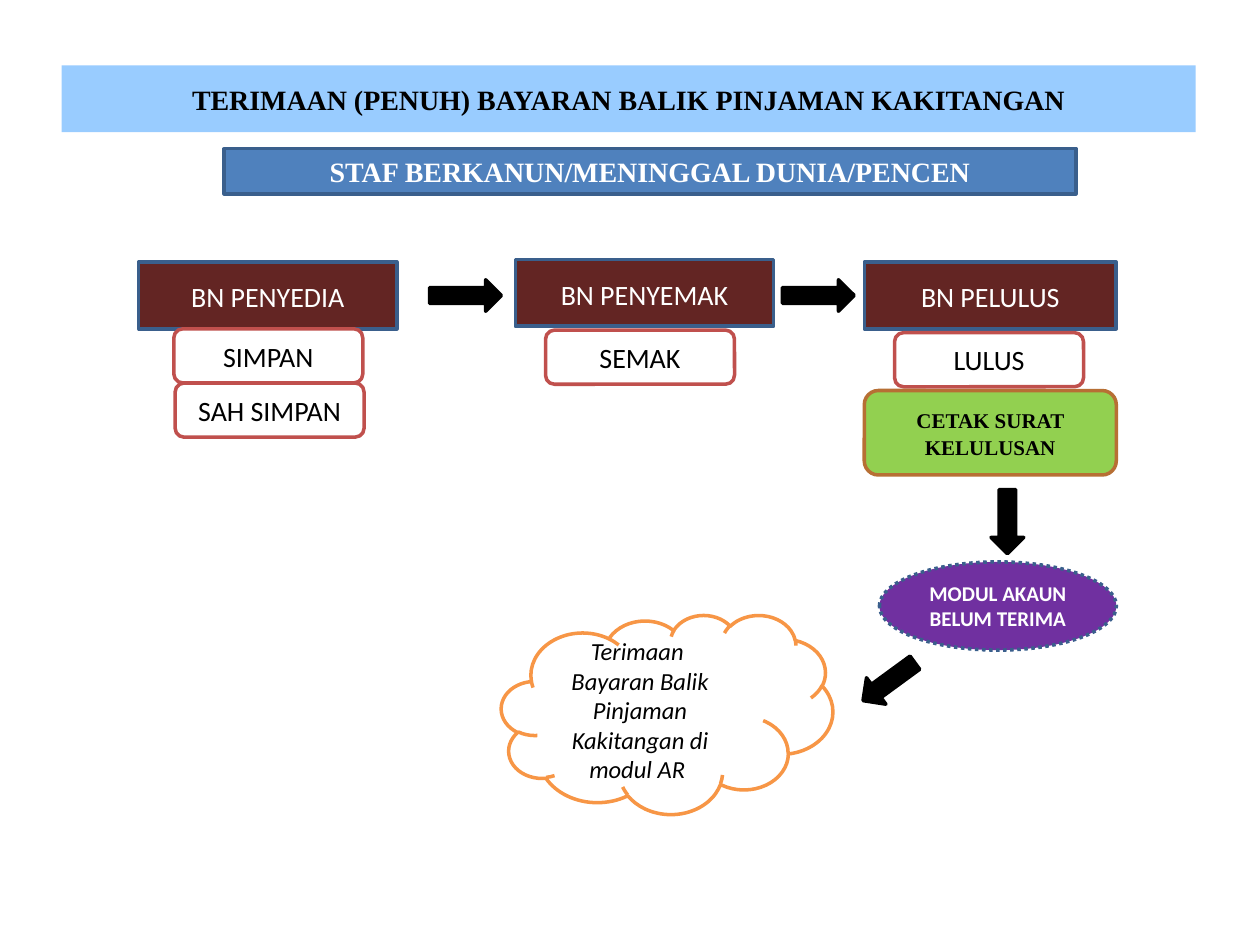
from pptx import Presentation
from pptx.dml.color import RGBColor
from pptx.enum.dml import MSO_LINE_DASH_STYLE as Dash
from pptx.enum.shapes import MSO_SHAPE as Shape
from pptx.enum.text import MSO_ANCHOR as Anchor, PP_ALIGN as Align
from pptx.util import Inches, Pt

SERIF, SANS = "Times New Roman", "Calibri"
BLACK, WHITE, BLUE_EDGE = "000000", "FFFFFF", "3A5F8C"


def color(value):
    return RGBColor.from_string(value)


class FlowSlide:
    """Holds the slide and the style of its elements."""

    line_width = Pt(2)

    def __init__(self, presentation):
        self.slide = presentation.slides.add_slide(presentation.slide_layouts[6])

    def shape(self, kind, box, fill, edge=None):
        shape = self.slide.shapes.add_shape(kind, *map(Inches, box))
        shape.shadow.inherit = False
        shape.fill.solid()
        shape.fill.fore_color.rgb = color(fill)
        if edge:
            shape.line.color.rgb = color(edge)
            shape.line.width = self.line_width
        else:
            shape.line.fill.background()
        return shape

    def label(self, shape, text, ink, size=16, font=SANS, spacing=None, **styles):
        frame = shape.text_frame
        frame.word_wrap = True
        frame.vertical_anchor = Anchor.MIDDLE
        paragraph = frame.paragraphs[0]
        paragraph.text = text
        for name, value in {"alignment": Align.CENTER, **(spacing or {})}.items():
            setattr(paragraph, name, value)
        run_font = paragraph.runs[0].font
        for name, value in {"name": font, "size": Pt(size), **styles}.items():
            setattr(run_font, name, value)
        run_font.color.rgb = color(ink)
        return shape

    def banner(self, text, box, fill, ink, edge=None):
        shape = self.shape(Shape.RECTANGLE, box, fill, edge)
        self.label(shape, text, ink, font=SERIF, bold=True)

    def role(self, text, left, top, width):
        shape = self.shape(Shape.RECTANGLE, (left, top, width, 0.53), "632523", BLUE_EDGE)
        self.label(shape, text, WHITE,
                   spacing={"line_spacing": 1.07, "space_after": Pt(8)})

    def action(self, text, left, top):
        shape = self.shape(Shape.ROUNDED_RECTANGLE, (left, top, 1.5, 0.43), WHITE, "C0504D")
        self.label(shape, text, BLACK)

    def arrow(self, box, rotation=0):
        self.shape(Shape.RIGHT_ARROW, box, BLACK, BLACK).rotation = rotation

    def letter(self, text, box):
        shape = self.shape(Shape.ROUNDED_RECTANGLE, box, "92D050", "B76F34")
        self.label(shape, text, BLACK, 12, SERIF, bold=True,
                   spacing={"line_spacing": 1.06, "space_after": Pt(8)})

    def module(self, text, box):
        shape = self.shape(Shape.OVAL, box, "7030A0", BLUE_EDGE)
        shape.line.dash_style = Dash.ROUND_DOT
        self.label(shape, text, WHITE, 12, bold=True)

    def cloud(self, text, box):
        shape = self.shape(Shape.CLOUD, box, WHITE, "F79646")
        self.label(shape, text, BLACK, 14, italic=True)
        shape.text_frame.margin_right = Inches(0.34)


def main():
    presentation = Presentation()
    presentation.slide_width, presentation.slide_height = Inches(10), Inches(7.5)
    flow = FlowSlide(presentation)

    # Title and case banner
    flow.banner("TERIMAAN (PENUH) BAYARAN BALIK PINJAMAN KAKITANGAN",
                (0.49, 0.52, 9, 0.53), "99CCFF", BLACK)
    flow.banner("STAF BERKANUN/MENINGGAL DUNIA/PENCEN",
                (1.78, 1.18, 6.76, 0.36), "4F81BD", WHITE, BLUE_EDGE)

    # Roles
    for text, left, top, width in (("BN PENYEDIA", 1.1, 2.08, 2.05),
                                   ("BN PENYEMAK", 4.09, 2.06, 2.05),
                                   ("BN PELULUS", 6.86, 2.08, 2)):
        flow.role(text, left, top, width)

    # Actions under each role
    for text, left, top in (("SIMPAN", 1.38, 2.61), ("SAH SIMPAN", 1.39, 3.04),
                            ("SEMAK", 4.33, 2.62), ("LULUS", 7.1, 2.64)):
        flow.action(text, left, top)

    # Outcome
    flow.letter("CETAK SURAT KELULUSAN", (6.86, 3.1, 2, 0.67))
    flow.module("MODUL AKAUN BELUM TERIMA", (6.98, 4.46, 1.88, 0.7))
    flow.cloud("Terimaan  Bayaran Balik Pinjaman Kakitangan di modul AR ",
               (3.98, 4.88, 2.63, 1.58))

    # Flow arrows
    for left in (3.41, 6.21):
        flow.arrow((left, 2.22, 0.57, 0.25))
    for left, top, rotation in ((7.74, 4.01, 90), (6.8, 5.28, 143.8)):
        flow.arrow((left, top, 0.51, 0.26), rotation)

    presentation.save("out.pptx")


if __name__ == "__main__":
    main()
